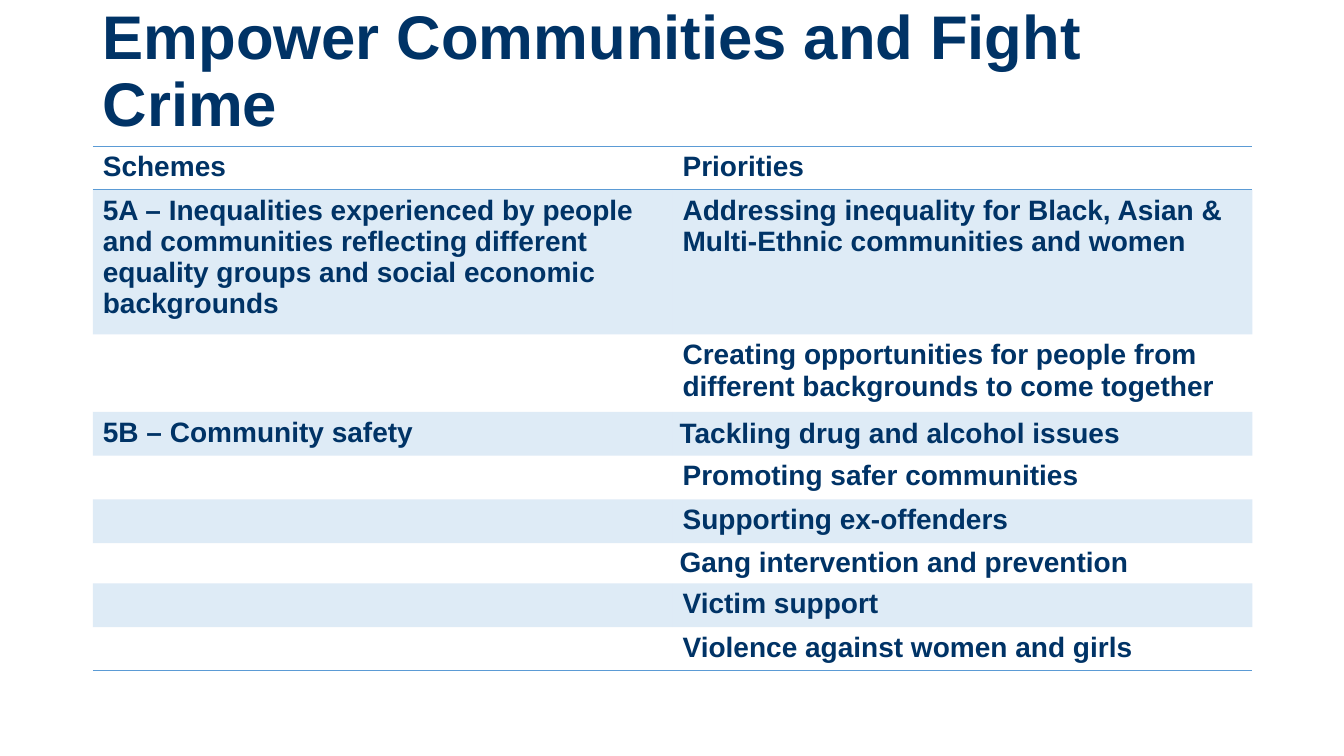
from lxml import etree
from pptx import Presentation
from pptx.dml.color import RGBColor
from pptx.enum.text import MSO_ANCHOR
from pptx.oxml.ns import qn
from pptx.util import Inches, Pt

MIDDLE = MSO_ANCHOR.MIDDLE
NAVY = "003366"
BLUE = "5B9BD5"
FONT = "Arial"
PLAIN_STYLE = "{2D5ABB26-0587-4C30-8999-92F81FD0307C}"
LEFT = 0.92
TABLE_TOP = 1.45
COLUMN_WIDTH = 5.75
ROW_HEIGHTS = [0.42, 1.39, 0.74, 0.42, 0.42, 0.42, 0.39, 0.42, 0.39]
SCHEMES = [
    ("Schemes", "Priorities"),
    ("5A – Inequalities experienced by people and communities reflecting "
     "different equality groups and social economic backgrounds",
     "Addressing inequality for Black, Asian & Multi-Ethnic communities and women"),
    ("", "Creating opportunities for people from different backgrounds to come together"),
    ("5B – Community safety", "Tackling drug and alcohol issues"),
    ("", "Promoting safer communities"),
    ("", "Supporting ex-offenders"),
    ("", "Gang intervention and prevention"),
    ("", "Victim support"),
    ("", "Violence against women and girls"),
]
TIGHT_ROWS = (3, 6)


def color(code):
    """Turn a hex string into a colour."""
    return RGBColor.from_string(code)


def add_text(frame, text, size):
    """Write one bold navy run into the first paragraph of a frame."""
    run = frame.paragraphs[0].add_run()
    run.text = text
    run.font.name = FONT
    run.font.size = Pt(size)
    run.font.bold = True
    run.font.color.rgb = color(NAVY)


def add_title(slide, text):
    """Add the heading, centred vertically above the table."""
    title = slide.shapes.add_textbox(Inches(LEFT), 0, Inches(10.69), Inches(TABLE_TOP))
    frame = title.text_frame
    frame.word_wrap = True
    frame.vertical_anchor = MIDDLE
    add_text(frame, text, 44)
    frame.paragraphs[0].line_spacing = 0.9


def add_rule(cell, side):
    """Draw a one-point blue border on a side of a cell."""
    border = etree.SubElement(cell._tc.get_or_add_tcPr(), qn(f"a:ln{side}"), w=str(Pt(1)))
    fill = etree.SubElement(border, qn("a:solidFill"))
    etree.SubElement(fill, qn("a:srgbClr"), val=BLUE)


def shade(cell):
    """Fill a cell with blue at 20 percent opacity."""
    cell.fill.solid()
    cell.fill.fore_color.rgb = color(BLUE)
    tint = cell._tc.tcPr.find(f".//{qn('a:solidFill')}/{qn('a:srgbClr')}")
    etree.SubElement(tint, qn("a:alpha"), val="20000")


def tighten(cell):
    """Centre a cell's text vertically within narrow margins."""
    cell.vertical_anchor = MIDDLE
    cell.margin_left = cell.margin_right = Inches(0.07)
    cell.margin_top = cell.margin_bottom = 0


def style_cell(cell, row, column):
    """Apply the rules, banding and margins that a cell's place calls for."""
    if row == 0:
        add_rule(cell, "T")
    if row in (0, len(SCHEMES) - 1):
        add_rule(cell, "B")
    if row % 2:
        shade(cell)
    else:
        cell.fill.background()
    if column == 1 and row in TIGHT_ROWS:
        tighten(cell)


def add_schemes_table(slide):
    """Add the banded table of schemes and priorities."""
    frame = slide.shapes.add_table(
        len(SCHEMES), 2, Inches(LEFT), Inches(TABLE_TOP),
        Inches(2 * COLUMN_WIDTH), Inches(sum(ROW_HEIGHTS)))
    table = frame.table
    table._tbl.tblPr.find(qn("a:tableStyleId")).text = PLAIN_STYLE
    for column in table.columns:
        column.width = Inches(COLUMN_WIDTH)
    for row, (entries, height) in enumerate(zip(SCHEMES, ROW_HEIGHTS)):
        table.rows[row].height = Inches(height)
        for column, text in enumerate(entries):
            cell = table.cell(row, column)
            style_cell(cell, row, column)
            if text:
                add_text(cell.text_frame, text, 20)


def main():
    """Build the slide and save it."""
    deck = Presentation()
    deck.slide_width = Inches(13.33)
    deck.slide_height = Inches(7.5)
    slide = deck.slides.add_slide(deck.slide_layouts[6])
    add_title(slide, "Empower Communities and Fight Crime")
    add_schemes_table(slide)
    deck.save("out.pptx")


if __name__ == "__main__":
    main()
